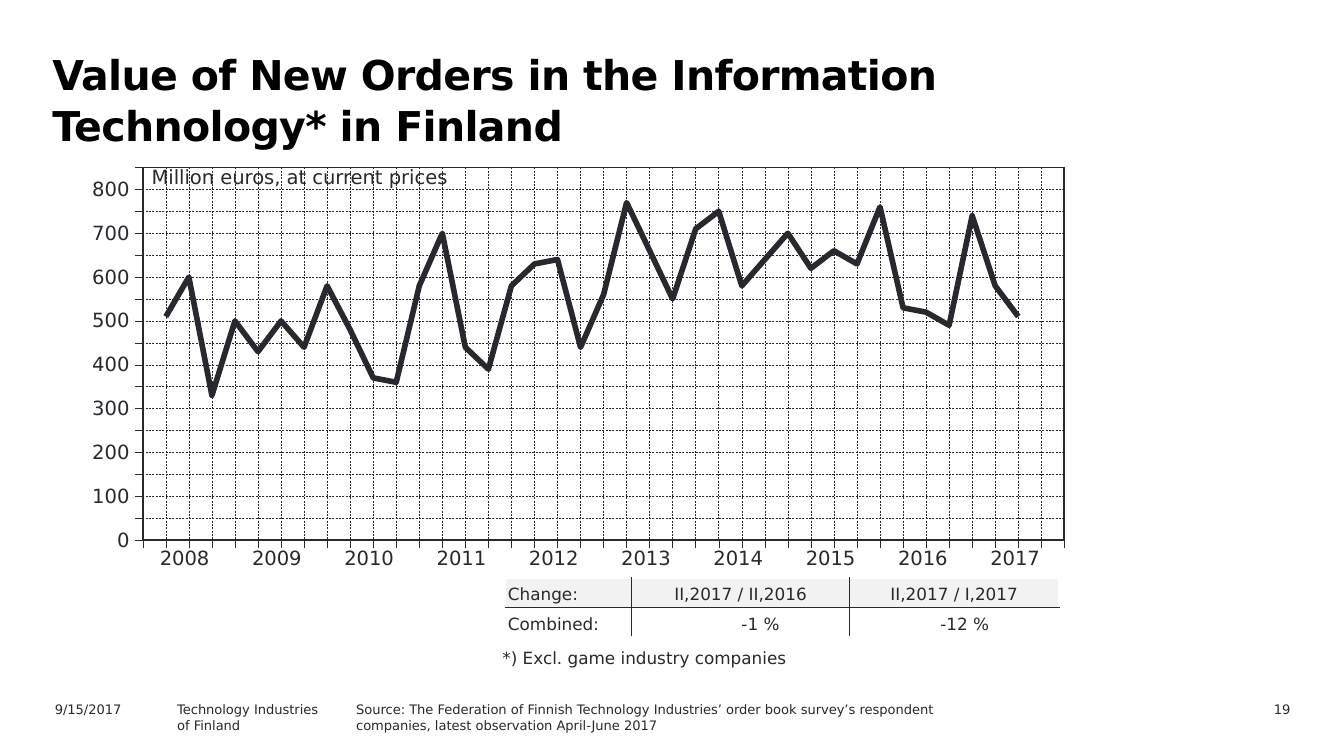
import dataclasses
import typing

import lxml.etree
import pptx
import pptx.chart.data
import pptx.dml.color
import pptx.enum.chart
import pptx.enum.dml
import pptx.enum.text
import pptx.oxml
import pptx.oxml.ns
import pptx.util

Inches, Pt = pptx.util.Inches, pptx.util.Pt
qn = pptx.oxml.ns.qn
Align = pptx.enum.text.PP_ALIGN
Anchor = pptx.enum.text.MSO_ANCHOR
Tick = pptx.enum.chart.XL_TICK_MARK


@dataclasses.dataclass(frozen=True)
class Theme:
    font: str = "DejaVu Sans"
    ink: str = "29282E"
    black: str = "000000"
    white: str = "FFFFFF"
    band: str = "F2F2F2"
    title: float = 22
    label: float = 10.5
    note: float = 9
    footer: float = 7


class Label(typing.NamedTuple):
    text: str
    box: tuple
    size: float
    align: Align = Align.LEFT
    wrap: bool = True


THEME = Theme()

# None leaves a quarter without a point
ORDERS = [None, 510, 600, 330, 500, 430, 500, 440, 580, 480, 370, 360, 580, 700,
          440, 390, 580, 630, 640, 440, 560, 770, 660, 550, 710, 750, 580, 640,
          700, 620, 660, 630, 760, 530, 520, 490, 740, 580, 510, None, None]

LABELS = [
    Label("Million euros, at current prices", (1.03, 1.18, 2.44, 0.27), THEME.label, wrap=False),
    Label("*) Excl. game industry companies", (3.64, 4.77, 3.35, 0.25), THEME.note),
    Label("Technology Industries\nof Finland", (1.22, 5.17, 1.8, 0.18), THEME.footer),
    Label("9/15/2017", (0.31, 5.17, 1, 0.18), THEME.footer),
    Label("19", (8.76, 5.17, 0.94, 0.18), THEME.footer, Align.RIGHT),
]


def rgb(color: str) -> pptx.dml.color.RGBColor:
    return pptx.dml.color.RGBColor.from_string(color)


def write(tf, text: str, *, size: float, color: str = THEME.ink, bold: bool = False,
          align=Align.LEFT, leading=None, tracking: int = 0) -> None:
    """Fill a text frame, one paragraph for each line of text."""
    for i, line in enumerate(text.split("\n")):
        p = tf.paragraphs[0] if i == 0 else tf.add_paragraph()
        p.alignment = align
        p.space_before = Pt(0)
        if leading:
            p.line_spacing = Pt(leading)
        r = p.add_run()
        r.text = line
        r.font.name, r.font.size, r.font.bold = THEME.font, Pt(size), bold
        r.font.color.rgb = rgb(color)
        if tracking:
            r.font._element.set("spc", str(tracking))


def place(sp, box: tuple) -> None:
    sp.left, sp.top, sp.width, sp.height = map(Inches, box)
    tf = sp.text_frame
    tf.auto_size = pptx.enum.text.MSO_AUTO_SIZE.NONE
    tf.vertical_anchor = Anchor.TOP
    tf.word_wrap = True


def add_label(s, label: Label) -> None:
    sp = s.shapes.add_textbox(*map(Inches, label.box))
    sp.text_frame.word_wrap = label.wrap
    write(sp.text_frame, label.text, size=label.size, align=label.align)


def style_line(line, width: float, dash=None) -> None:
    line.color.rgb = rgb(THEME.ink)
    line.width = Pt(width)
    if dash:
        line.dash_style = dash


def add_orders_chart(s) -> None:
    data = pptx.chart.data.CategoryChartData()
    data.categories = [str(n + 1) for n in range(len(ORDERS))]
    data.add_series("Series 1", ORDERS)
    box = map(Inches, (0.31, 1.11, 9.18, 3.33))
    chart = s.shapes.add_chart(pptx.enum.chart.XL_CHART_TYPE.LINE, *box, data).chart
    chart.has_legend = chart.has_title = False
    chart.font.name, chart.font.size = THEME.font, Pt(THEME.label)
    chart.font.color.rgb = rgb(THEME.ink)

    plot = chart.plots[0]
    plot.vary_by_categories = False
    series = plot.series[0]
    series.smooth = False
    series.marker.style = pptx.enum.chart.XL_MARKER_STYLE.NONE
    style_line(series.format.line, 3)

    for axis in (chart.category_axis, chart.value_axis):
        axis.major_tick_mark, axis.minor_tick_mark = Tick.OUTSIDE, Tick.NONE
        axis.has_major_gridlines = True
        style_line(axis.format.line, 0.22)
        style_line(axis.major_gridlines.format.line, 0.25, pptx.enum.dml.MSO_LINE.DASH)
    chart.category_axis.tick_label_position = pptx.enum.chart.XL_TICK_LABEL_POSITION.NONE
    value = chart.value_axis
    value.minimum_scale, value.maximum_scale, value.major_unit = 0, 850, 50
    value.tick_labels.number_format = "#,##0"
    value.tick_labels.number_format_is_linked = False

    # Points sit on the ticks
    val_ax = value._element
    cross = val_ax.find(qn("c:crossBetween"))
    if cross is None:
        cross = lxml.etree.Element(qn("c:crossBetween"))
        val_ax.find(qn("c:crosses")).addnext(cross)
    cross.set("val", "midCat")

    # Fixed plot rectangle with a frame
    area = chart._chartSpace.find(".//" + qn("c:plotArea"))
    for old in area.findall(qn("c:layout")):
        area.remove(old)
    ns = pptx.oxml.ns.nsdecls("c", "a")
    edges = "".join(f'<c:{k} val="{v}"/>' for k, v in (
        ("layoutTarget", "inner"), ("xMode", "edge"), ("yMode", "edge"),
        ("x", 0.082), ("y", 0.041), ("w", 0.747), ("h", 0.833)))
    area.insert(0, pptx.oxml.parse_xml(
        f"<c:layout {ns}><c:manualLayout>{edges}</c:manualLayout></c:layout>"))
    area.append(pptx.oxml.parse_xml(
        f'<c:spPr {ns}><a:noFill/><a:ln w="{Pt(1)}"><a:solidFill>'
        f'<a:srgbClr val="{THEME.ink}"/></a:solidFill></a:ln></c:spPr>'))


def set_borders(cell, colors: dict) -> None:
    """Draw the sides named in colors and clear the others."""
    for side in "LRTB":
        paint = "<a:noFill/>"
        if side in colors:
            paint = f'<a:solidFill><a:srgbClr val="{colors[side]}"/></a:solidFill>'
        cell._tc.get_or_add_tcPr().append(pptx.oxml.parse_xml(
            f'<a:ln{side} {pptx.oxml.ns.nsdecls("a")} w="{Pt(1)}">{paint}</a:ln{side}>'))


def add_grid(s, left: float, top: float, widths: list, row_height: float, rows: int):
    box = map(Inches, (left, top, sum(widths), row_height * rows))
    table = s.shapes.add_table(rows, len(widths), *box).table
    table.first_row = table.horz_banding = False
    for column, width in zip(table.columns, widths):
        column.width = Inches(width)
    for row in table.rows:
        row.height = Inches(row_height)
    return table


def add_years(s) -> None:
    table = add_grid(s, 1.03, 4.02, [6.87 / 10] * 10, 0.31, 1)
    for i, cell in enumerate(table.iter_cells()):
        set_borders(cell, {})
        cell.fill.background()
        write(cell.text_frame, str(2008 + i), size=THEME.label, align=Align.CENTER)


def add_changes(s) -> None:
    rows = [("Change:", "II,2017 / II,2016", "II,2017 / I,2017"),
            ("Combined:", "-1 %", "-12 %")]
    table = add_grid(s, 3.76, 4.3, [0.94, 1.62, 1.56], 0.22, len(rows))
    for y, row in enumerate(rows):
        for x, text in enumerate(row):
            cell, header = table.cell(y, x), y == 0
            set_borders(cell, {"L": THEME.ink if x else THEME.white,
                               "R": THEME.ink if x < 2 else THEME.white,
                               "T": THEME.white if header else THEME.ink,
                               "B": THEME.ink if header else THEME.white})
            cell.fill.solid()
            cell.fill.fore_color.rgb = rgb(THEME.band if header else THEME.white)
            cell.vertical_anchor = Anchor.BOTTOM
            cell.margin_left = cell.margin_top = cell.margin_bottom = Inches(0.02)
            cell.margin_right = Inches(0.02 if header or x == 0 else 0.52)
            align = Align.LEFT if x == 0 else Align.CENTER if header else Align.RIGHT
            write(cell.text_frame, text, size=THEME.note, align=align)


def main() -> None:
    prs = pptx.Presentation()
    # Widescreen, 16 to 9
    prs.slide_width = Inches(10)
    prs.slide_height = prs.slide_width * 9 // 16
    s = prs.slides.add_slide(prs.slide_layouts[1])

    # Title
    title = s.shapes.title
    place(title, (0.28, 0.31, 8.74, 0.71))
    title.text_frame.margin_left, title.text_frame.margin_top = Inches(0.11), Inches(0.05)
    write(title.text_frame, "Value of New Orders in the Information Technology* in Finland",
          size=THEME.title, color=THEME.black, bold=True, leading=27, tracking=-34)

    # Source line, without the bullet of the body placeholder
    body = s.placeholders[1]
    place(body, (2.55, 5.17, 5.07, 0.18))
    pPr = body.text_frame.paragraphs[0]._p.get_or_add_pPr()
    pPr.set("marL", "0")
    pPr.set("indent", "0")
    lxml.etree.SubElement(pPr, qn("a:buNone"))
    write(body.text_frame, "Source: The Federation of Finnish Technology Industries’ order book "
          "survey’s respondent companies, latest observation April-June 2017", size=THEME.footer)

    # Chart, year row, change table and small texts
    add_orders_chart(s)
    add_years(s)
    add_changes(s)
    for label in LABELS:
        add_label(s, label)
    prs.save("out.pptx")


if __name__ == "__main__":
    main()
